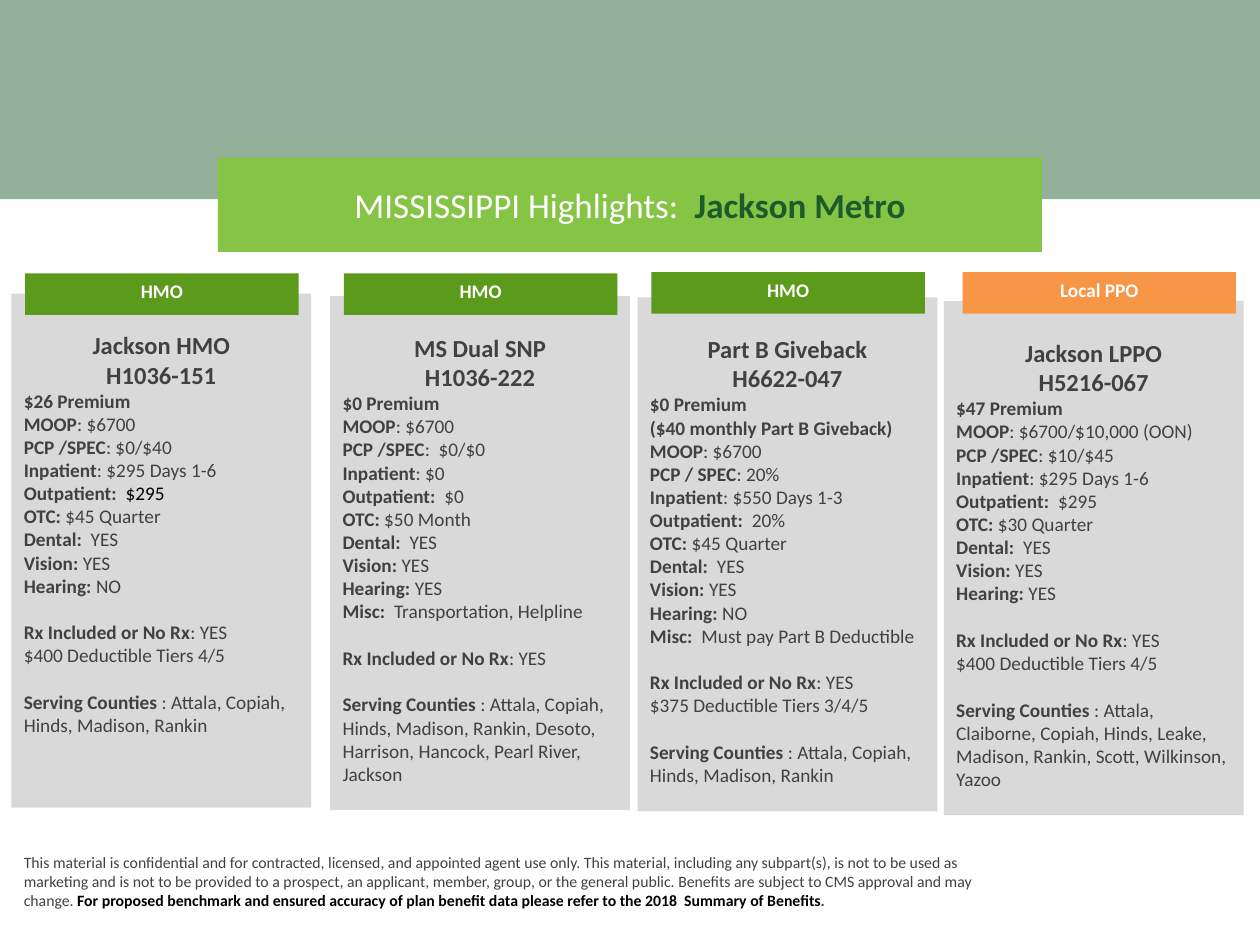
from lxml.etree import SubElement
from pptx import Presentation
from pptx.dml.color import RGBColor
from pptx.enum.shapes import MSO_SHAPE as Shape
from pptx.enum.text import MSO_ANCHOR as Anchor, MSO_AUTO_SIZE as AutoSize, PP_ALIGN as Align
from pptx.oxml.ns import qn
from pptx.util import Inches, Pt

COLORS = {
    "forest": "1D5B2D", "lime": "86C446", "green": "5C9A1B", "orange": "F79646",
    "card": "D9D9D9", "ink": "414042", "black": "000000", "white": "FFFFFF",
}
FONT = "Calibri"
CARD_SIZE = (2.38, 4.08)
TAB_SIZE = (2.17, 0.33)
BLANK_LINE = Pt(13.4)

TITLE = [("MISSISSIPPI Highlights:  ", False, "white"), ("Jackson Metro", True, "forest")]
DISCLAIMER = [
    ("This material is confidential and for contracted, licensed, and appointed agent use only. "
     "This material, including any subpart(s), is not to be used as marketing and is not to be "
     "provided to a prospect, an applicant, member, group, or the general public. Benefits are "
     "subject to CMS approval and may change. ", False, "ink"),
    ("For proposed benchmark and ensured accuracy of plan benefit data please refer to the "
     "2018  Summary of Benefits", True, "black"),
    (".", True, "ink"),
]

PLANS = [
    {
        "tab": "HMO", "tab_color": "green", "tab_at": (0.2, 2.17), "card_at": (0.09, 2.33),
        "names": ["Jackson HMO", "H1036-151"],
        "groups": [
            [("$26 Premium", ""), ("MOOP", ": $6700"), ("PCP /SPEC", ": $0/$40"),
             ("Inpatient", ": $295 Days 1-6"), ("Outpatient:  ", "$295", "black"),
             ("OTC:", " $45 Quarter"), ("Dental:  ", "YES"), ("Vision: ", "YES"),
             ("Hearing: ", "NO")],
            [("Rx Included or No Rx", ": YES"), ("", "$400 Deductible Tiers 4/5")],
            [("Serving Counties ", ": Attala, Copiah, Hinds, Madison, Rankin")],
        ],
    },
    {
        "tab": "HMO", "tab_color": "green", "tab_at": (2.73, 2.17), "card_at": (2.62, 2.35),
        "names": ["MS Dual SNP", "H1036-222"],
        "groups": [
            [("$0 Premium", ""), ("MOOP", ": $6700"), ("PCP /SPEC", ":  $0/$0"),
             ("Inpatient", ": $0"), ("Outpatient:  ", "$0"), ("OTC:", " $50 Month"),
             ("Dental:  ", "YES"), ("Vision: ", "YES"), ("Hearing: ", "YES"),
             ("Misc:  ", "Transportation, Helpline")],
            [("Rx Included or No Rx", ": YES")],
            [("Serving Counties ", ": Attala, Copiah, Hinds, Madison, Rankin, Desoto, "
              "Harrison, Hancock, Pearl River, Jackson")],
        ],
    },
    {
        "tab": "HMO", "tab_color": "green", "tab_at": (5.17, 2.16), "card_at": (5.06, 2.36),
        "names": ["Part B Giveback", "H6622-047"],
        "groups": [
            [("$0 Premium", ""), ("($40 monthly Part B Giveback)", ""), ("MOOP", ": $6700"),
             ("PCP / SPEC", ": 20%"), ("Inpatient", ": $550 Days 1-3"),
             ("Outpatient:  ", "20%"), ("OTC:", " $45 Quarter"), ("Dental:  ", "YES"),
             ("Vision: ", "YES"), ("Hearing: ", "NO"),
             ("Misc:  ", "Must pay Part B Deductible")],
            [("Rx Included or No Rx", ": YES"), ("", "$375 Deductible Tiers 3/4/5")],
            [("Serving Counties ", ": Attala, Copiah, Hinds, Madison, Rankin")],
        ],
    },
    {
        "tab": "Local PPO", "tab_color": "orange", "tab_at": (7.64, 2.16), "card_at": (7.49, 2.39),
        "names": ["Jackson LPPO", "H5216-067"],
        "groups": [
            [("$47 Premium", ""), ("MOOP", ": $6700/$10,000 (OON)"), ("PCP /SPEC", ": $10/$45"),
             ("Inpatient", ": $295 Days 1-6"), ("Outpatient:  ", "$295"),
             ("OTC:", " $30 Quarter"), ("Dental:  ", "YES"), ("Vision: ", "YES"),
             ("Hearing: ", "YES")],
            [("Rx Included or No Rx", ": YES"), ("", "$400 Deductible Tiers 4/5")],
            [("Serving Counties ", ": Attala, Claiborne, Copiah, Hinds, Leake, Madison, "
              "Rankin, Scott, Wilkinson, Yazoo")],
        ],
    },
]


def paint(shape, color):
    shape.fill.solid()
    shape.fill.fore_color.rgb = RGBColor.from_string(COLORS[color])


def add_block(page, at, size, color):
    block = page.shapes.add_shape(Shape.RECTANGLE, *map(Inches, at + size))
    block.shadow.inherit = False
    block.line.fill.background()
    paint(block, color)
    block.text_frame.vertical_anchor = Anchor.TOP
    return block


def write(para, spans, size, align=Align.LEFT):
    para.alignment = align
    for text, bold, color in spans:
        if text:
            span = para.add_run()
            span.text = text
            span.font.name = FONT
            span.font.size = Pt(size)
            span.font.bold = bold
            span.font.color.rgb = RGBColor.from_string(COLORS[color])


def add_plan(page, plan):
    frame = add_block(page, plan["card_at"], CARD_SIZE, "card").text_frame
    frame.word_wrap = True
    frame.margin_top = Inches(0.29)
    for index, name in enumerate(plan["names"]):
        para = frame.add_paragraph() if index else frame.paragraphs[0]
        write(para, [(name, True, "ink")], 14, Align.CENTER)
    for group_index, group in enumerate(plan["groups"]):
        for line_index, (label, value, *color) in enumerate(group):
            para = frame.add_paragraph()
            if group_index and not line_index:
                para.space_before = BLANK_LINE
            value_color = color[0] if color else "ink"
            write(para, [(label, True, "ink"), (value, False, value_color)], 11)

    frame = add_block(page, plan["tab_at"], TAB_SIZE, plan["tab_color"]).text_frame
    frame.margin_left = frame.margin_right = Inches(0.05)
    write(frame.paragraphs[0], [(plan["tab"], True, "white")], 11, Align.CENTER)


def main():
    """Build the plan highlights slide."""
    deck = Presentation()
    deck.slide_width, deck.slide_height = Inches(10), Inches(7.5)
    page = deck.slides.add_slide(deck.slide_layouts[5])

    band = add_block(page, (0, 0), (10, 1.58), "forest")
    fill_color = band.fill._xPr.find(qn("a:solidFill"))[0]
    SubElement(fill_color, qn("a:alpha"), val="48000")

    title = page.shapes.title
    title.left, title.top, title.width, title.height = map(Inches, (1.73, 1.25, 6.54, 0.75))
    paint(title, "lime")
    title.text_frame.auto_size = AutoSize.NONE
    title.text_frame.vertical_anchor = Anchor.MIDDLE
    write(title.text_frame.paragraphs[0], TITLE, 20, Align.CENTER)
    band._element.addnext(title._element)

    for plan in PLANS:
        add_plan(page, plan)

    footer = page.shapes.add_textbox(*map(Inches, (0.09, 6.72, 7.82, 0.56)))
    footer.text_frame.word_wrap = True
    write(footer.text_frame.paragraphs[0], DISCLAIMER, 9)

    deck.save("out.pptx")


if __name__ == "__main__":
    main()
